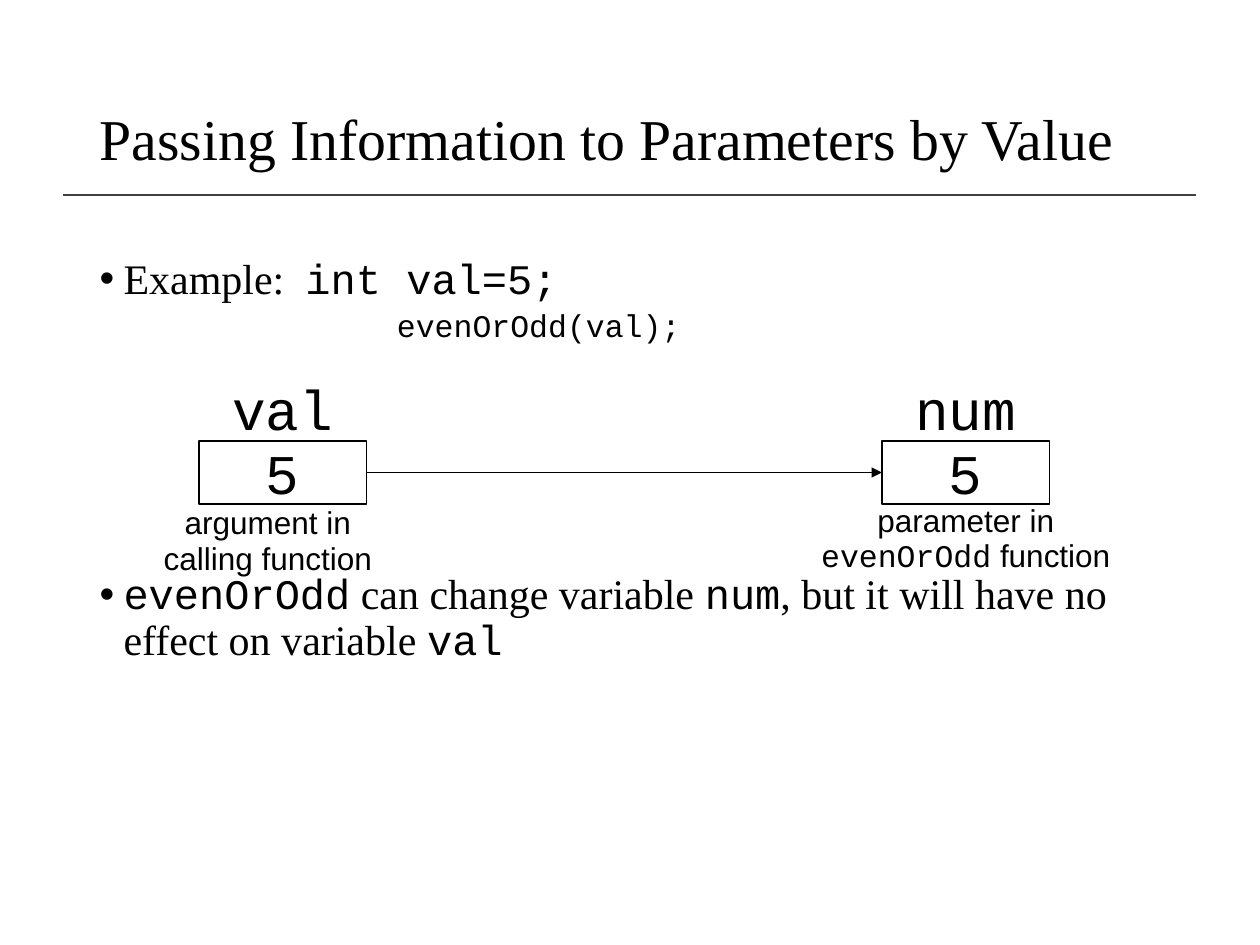
from lxml import etree
from pptx import Presentation
from pptx.dml.color import RGBColor
from pptx.enum.shapes import MSO_CONNECTOR as CONNECTOR, MSO_SHAPE as SHAPE
from pptx.enum.text import MSO_ANCHOR as ANCHOR, MSO_AUTO_SIZE as AUTO_SIZE, PP_ALIGN as ALIGN
from pptx.oxml.ns import qn
from pptx.util import Inches, Pt

BLACK = RGBColor(0x00, 0x00, 0x00)
GRAY = RGBColor(0x40, 0x40, 0x40)
SERIF, SANS, MONO = "Times New Roman", "Arial", "Courier New"


def write_paragraph(paragraph, runs, size, space_before, line_spacing=1.0):
    """Fill a paragraph with (text, font name) runs."""
    paragraph.font.size = Pt(size)
    paragraph.font.color.rgb = BLACK
    paragraph.space_before = Pt(space_before)
    paragraph.line_spacing = line_spacing
    for text, font_name in runs:
        run = paragraph.add_run()
        run.text = text
        run.font.name = font_name


def add_line(shapes, start_x, end_x, y, color, width):
    line = shapes.add_connector(CONNECTOR.STRAIGHT, Inches(start_x), Inches(y),
                                Inches(end_x), Inches(y))
    line.line.color.rgb = color
    line.line.width = Pt(width)
    etree.SubElement(line._element.spPr, qn("a:effectLst"))
    return line


presentation = Presentation()
presentation.slide_width = Inches(10)
presentation.slide_height = Inches(7.5)
slide = presentation.slides.add_slide(presentation.slide_layouts[1])

# Title and the rule below it
title = slide.shapes.title
title.left, title.top, title.width, title.height = map(Inches, (0.69, 0.4, 8.62, 1.45))
title.text_frame.vertical_anchor = ANCHOR.MIDDLE
title.text_frame.auto_size = AUTO_SIZE.NONE
paragraph = title.text_frame.paragraphs[0]
paragraph.alignment = ALIGN.LEFT
write_paragraph(paragraph, [("Passing Information to Parameters by Value", SERIF)], 33, 0, 0.9)
add_line(slide.shapes, 0.5, 9.49, 1.55, GRAY, 1)

# Body: the last bullet leaves room for the diagram
body = slide.placeholders[1]
body.left, body.top, body.width, body.height = map(Inches, (0.69, 2, 8.62, 4.76))
body.text_frame.auto_size = AUTO_SIZE.NONE
body_items = [
    # level, size, space before, left indent, first-line indent, runs
    (0, 24, 7.5, 0.19, -0.19, [("Example:  ", SERIF), ("int val=5;", MONO)]),
    (1, 18, 3.8, 2.36, 0, [("evenOrOdd(val);", MONO)]),
    (0, 24, 131, 0.19, -0.19, [
        ("evenOrOdd", MONO), (" can change variable ", SERIF), ("num", MONO),
        (", but it will have no effect on variable ", SERIF), ("val", MONO)]),
]
for index, (level, size, space, left, first, runs) in enumerate(body_items):
    frame = body.text_frame
    paragraph = frame.add_paragraph() if index else frame.paragraphs[0]
    paragraph.level = level
    write_paragraph(paragraph, runs, size, space, 0.9)
    properties = paragraph._p.get_or_add_pPr()
    properties.set("marL", str(Inches(left)))
    properties.set("indent", str(Inches(first)))
    if level:
        bullet = etree.Element(qn("a:buNone"))
        properties.find(qn("a:spcBef")).addnext(bullet)

# Diagram: a named value box with a caption on each side
diagram = slide.shapes.add_group_shape().shapes
variables = [
    # name, box left, caption left, caption width, caption height, spacing, caption lines
    ("val", 1.58, 0.75, 2.75, 0.82, 0.8,
     [[("argument in", SANS)], [("calling function", SANS)]]),
    ("num", 7, 6, 3.33, 0.78, 0.75,
     [[("parameter in", SANS)], [("evenOrOdd", MONO), (" function", SANS)]]),
]
boxes = []
for name, left, caption_left, caption_width, caption_height, spacing, lines in variables:
    box = diagram.add_shape(SHAPE.RECTANGLE, Inches(left), Inches(3.5), Inches(1.33), Inches(0.5))
    box.shadow.inherit = False
    box.fill.background()
    box.line.color.rgb = BLACK
    box.line.width = Pt(0.75)
    box.text_frame.vertical_anchor = ANCHOR.MIDDLE
    box.text_frame.word_wrap = False
    boxes.append(box)

    label = diagram.add_textbox(Inches(left), Inches(2.92), Inches(1.33), Inches(0.63))
    label.text_frame.word_wrap = True
    for shape, text in ((box, "5"), (label, name)):
        paragraph = shape.text_frame.paragraphs[0]
        paragraph.alignment = ALIGN.CENTER
        write_paragraph(paragraph, [(text, MONO)], 32, 6.4)

    caption = diagram.add_textbox(Inches(caption_left), Inches(4),
                                  Inches(caption_width), Inches(caption_height))
    frame = caption.text_frame
    frame.word_wrap = True
    for index, runs in enumerate(lines):
        paragraph = frame.add_paragraph() if index else frame.paragraphs[0]
        paragraph.alignment = ALIGN.CENTER
        write_paragraph(paragraph, runs, 18, 3.6, spacing)

# Arrow from argument to parameter
arrow = add_line(diagram, 2.91, 7, 3.75, BLACK, 0.75)
arrow.begin_connect(boxes[0], 3)
arrow.end_connect(boxes[1], 1)
etree.SubElement(arrow.line._get_or_add_ln(), qn("a:tailEnd"), type="triangle")

presentation.save("out.pptx")
